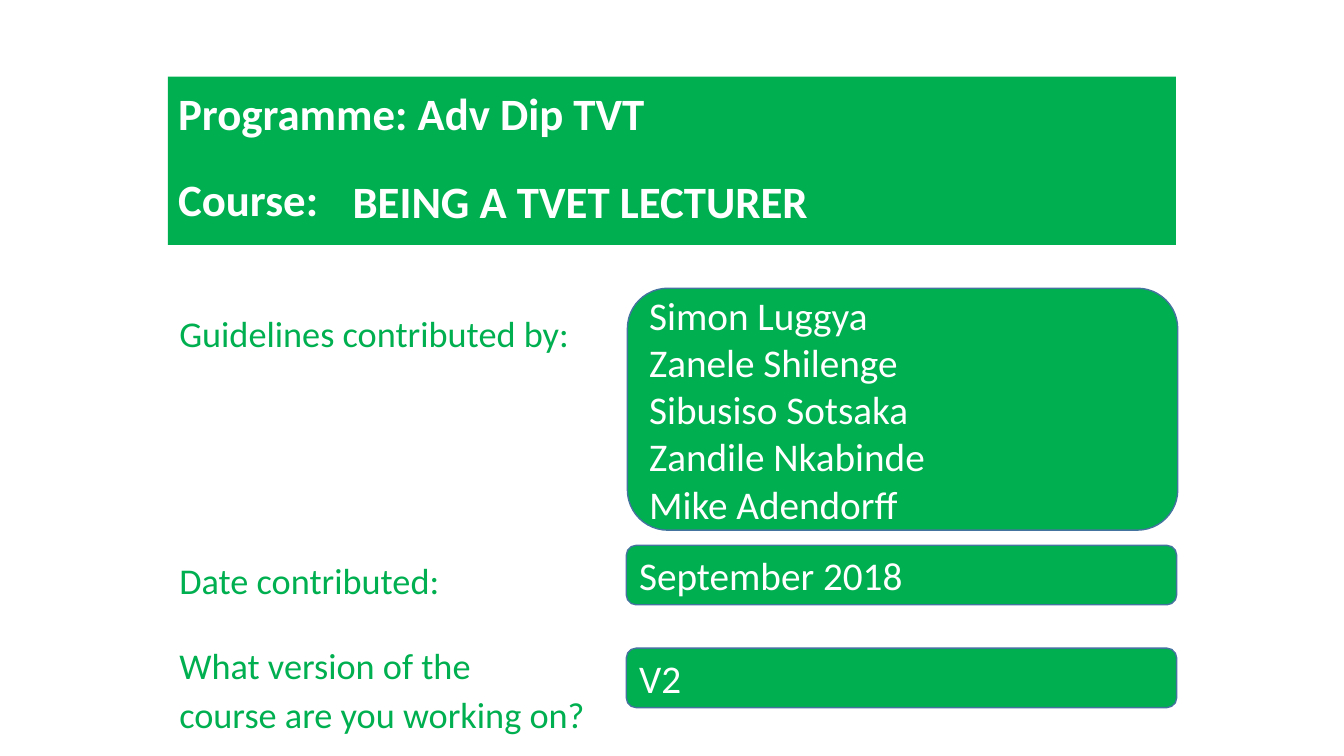
from pptx import Presentation
from pptx import util as u
from pptx.dml.color import RGBColor
from pptx.enum import shapes, text

WIDTH, HEIGHT = 13.33, 7.5
GREEN, WHITE, OUTLINE = "00B050", "FFFFFF", "43739E"
LABEL_LEFT, ANSWER_LEFT = 12.6, 46.6
LABEL_WIDTH, ANSWER_WIDTH = 33, 40.95
ANSWER_HEIGHT = 7.87


def area(left, top, width, height):
    across, down = WIDTH / 100, HEIGHT / 100
    return [u.Inches(share * unit) for share, unit in
            zip((left, top, width, height), (across, down, across, down))]


def paint(color, hex_code):
    color.rgb = RGBColor.from_string(hex_code)


def fill_with(shape, hex_code):
    shape.fill.solid()
    paint(shape.fill.fore_color, hex_code)


def write(frame, lines, size, hex_code, bold=False, gap=0, spacing=1.0):
    frame.word_wrap = True
    frame.auto_size = text.MSO_AUTO_SIZE.NONE
    frame.vertical_anchor = text.MSO_ANCHOR.MIDDLE
    for index, line in enumerate(lines):
        paragraph = frame.add_paragraph() if index else frame.paragraphs[0]
        paragraph.alignment = text.PP_ALIGN.LEFT
        paragraph.line_spacing = spacing
        paragraph.space_before = u.Pt(gap if index else 0)
        run = paragraph.add_run()
        run.text = line
        run.font.name = "Calibri"
        run.font.size = u.Pt(size)
        run.font.bold = bold
        paint(run.font.color, hex_code)


def add_banner(slide):
    banner = slide.shapes.title
    banner.left, banner.top, banner.width, banner.height = area(12.5, 10.13, 75, 22.27)
    fill_with(banner, GREEN)
    write(banner.text_frame, ["Programme: Adv Dip TVT", "Course:"], 32, WHITE,
          bold=True, gap=31.2, spacing=0.8)
    course = slide.shapes.add_textbox(*area(25.5, 22.27, 50.8, 8.53))
    write(course.text_frame, ["BEING A TVET LECTURER"], 32, WHITE, bold=True)


def add_label(slide, top, height, lines):
    label = slide.shapes.add_textbox(*area(LABEL_LEFT, top, LABEL_WIDTH, height))
    write(label.text_frame, lines, 25.9, GREEN, gap=3.7)


def add_answer(slide, top, height, lines, left=ANSWER_LEFT):
    answer = slide.shapes.add_shape(shapes.MSO_SHAPE.ROUNDED_RECTANGLE,
                                    *area(left, top, ANSWER_WIDTH, height))
    answer.shadow.inherit = False
    fill_with(answer, GREEN)
    paint(answer.line.color, OUTLINE)
    answer.line.width = u.Pt(1)
    write(answer.text_frame, lines, 28, WHITE)


def main():
    deck = Presentation()
    deck.slide_width, deck.slide_height = u.Inches(WIDTH), u.Inches(HEIGHT)
    slide = deck.slides.add_slide(deck.slide_layouts[5])
    add_banner(slide)

    contributors = ["Simon Luggya", "Zanele Shilenge", "Sibusiso Sotsaka",
                    "Zandile Nkabinde", "Mike Adendorff"]
    add_label(slide, 40.1, 8, ["Guidelines contributed by:"])
    add_answer(slide, 38.13, 32, contributors, left=46.68)

    add_label(slide, 72.7, 8, ["Date contributed:"])
    add_answer(slide, 72.13, ANSWER_HEIGHT, ["September 2018"])

    add_label(slide, 84.7, 13, ["What version of the", "course are you working on?"])
    add_answer(slide, 85.73, ANSWER_HEIGHT, ["V2"])
    deck.save("out.pptx")


if __name__ == "__main__":
    main()
